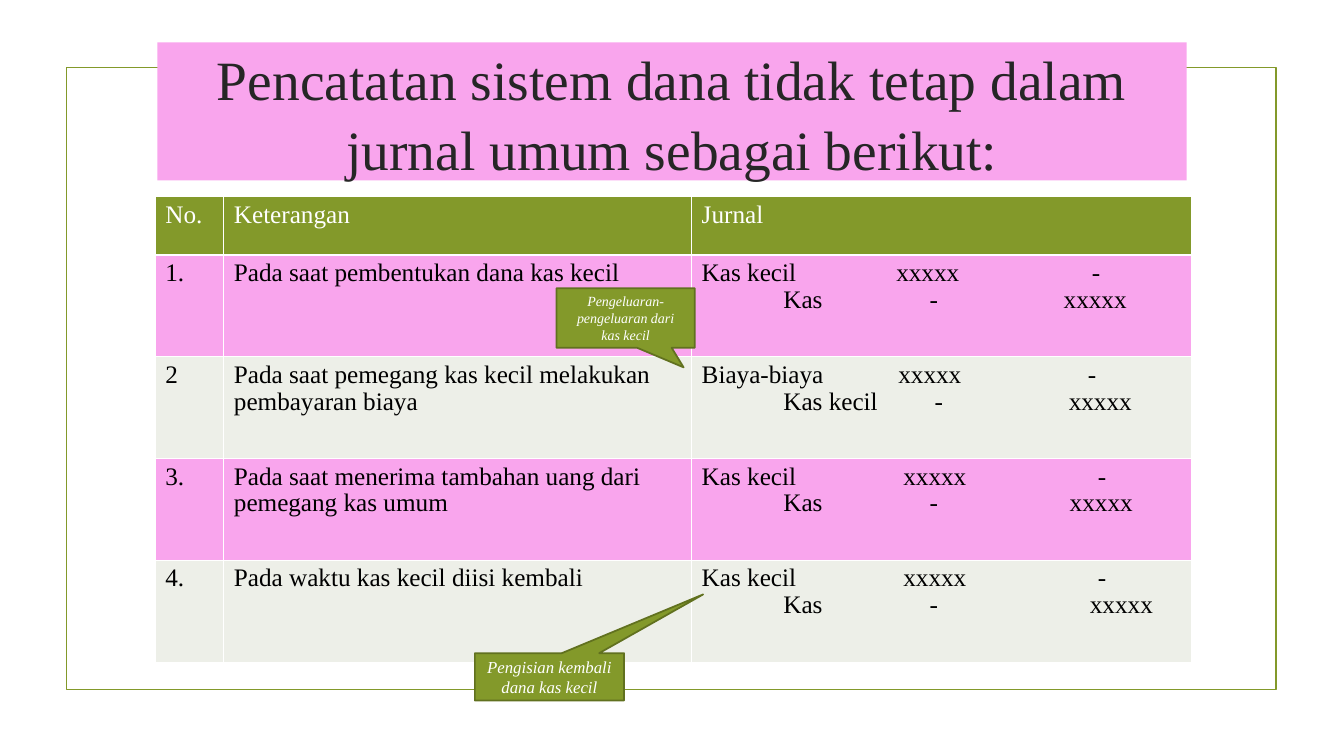
from pptx import Presentation
from pptx import util as u
from pptx.dml import color
from pptx.enum import shapes, text
from pptx.oxml import ns
from lxml import etree

COLORS = {
    "olive": "83992A", "dark_olive": "61711F", "pink": "F9A5ED",
    "pale": "EDEFE8", "white": "FFFFFF", "black": "000000", "title": "262626",
}
FONT = "Times New Roman"
HEADERS = ["No.", "Keterangan", "Jurnal"]

# Each entry: number, description, then debit and credit lines with tab stops
ENTRIES = [
    ("1.", "Pada saat pembentukan dana kas kecil",
     ("Kas kecil\txxxxx\t-", (1.93, 3.87)),
     ("\tKas\t-\txxxxx", (0.81, 2.26, 3.59))),
    ("2", "Pada saat pemegang kas kecil melakukan pembayaran biaya",
     ("Biaya-biaya\txxxxx\t-", (1.95, 3.83)),
     ("\tKas kecil\t-\txxxxx", (0.81, 2.31, 3.64))),
    ("3.", "Pada saat menerima tambahan uang dari pemegang kas umum",
     ("Kas kecil\txxxxx\t-", (2.0, 3.93)),
     ("\tKas\t-\txxxxx", (0.81, 2.26, 3.65))),
    ("4.", "Pada waktu kas kecil diisi kembali",
     ("Kas kecil\txxxxx\t-", (2.0, 3.93)),
     ("\tKas\t-\txxxxx", (0.81, 2.26, 3.85))),
]


def rgb(name):
    return color.RGBColor.from_string(COLORS[name])


class JournalSlide:
    def __init__(self, presentation):
        self.slide = presentation.slides.add_slide(presentation.slide_layouts[5])
        self.shapes = self.slide.shapes

    def paint(self, item, name):
        item.fill.solid()
        item.fill.fore_color.rgb = rgb(name)

    def format_text(self, paragraph, size, name, italic=False):
        for run in paragraph.runs:
            run.font.name = FONT
            run.font.size = u.Pt(size)
            run.font.bold = False
            run.font.italic = italic
            run.font.color.rgb = rgb(name)

    def outlined_shape(self, kind, box, line):
        shape = self.shapes.add_shape(kind, *map(u.Inches, box))
        shape.shadow.inherit = False
        shape.line.color.rgb = rgb(line)
        shape.line.width = u.Pt(1.25)
        return shape

    def frame(self, box):
        shape = self.outlined_shape(shapes.MSO_SHAPE.RECTANGLE, box, "olive")
        shape.fill.background()
        # The frame lies behind the title
        self.shapes.title.element.addprevious(shape.element)

    def title(self, words, box):
        title = self.shapes.title
        title.left, title.top, title.width, title.height = map(u.Inches, box)
        self.paint(title, "pink")
        frame = title.text_frame
        frame.text = words
        frame.word_wrap = True
        frame.auto_size = text.MSO_AUTO_SIZE.NONE
        frame.vertical_anchor = text.MSO_ANCHOR.MIDDLE
        paragraph = frame.paragraphs[0]
        paragraph.alignment = text.PP_ALIGN.CENTER
        paragraph.line_spacing = 1.05
        self.format_text(paragraph, 39.6, "title")

    def tab_stops(self, paragraph, stops):
        properties = paragraph._p.get_or_add_pPr()
        tab_list = etree.SubElement(properties, ns.qn("a:tabLst"))
        for stop in stops:
            etree.SubElement(tab_list, ns.qn("a:tab"), pos=str(u.Inches(stop)), algn="l")

    def borders(self, cell):
        properties = cell._tc.get_or_add_tcPr()
        for position, side in enumerate(("lnL", "lnR", "lnT", "lnB")):
            line = etree.Element(ns.qn(f"a:{side}"), w=str(u.Pt(1)))
            fill = etree.SubElement(line, ns.qn("a:solidFill"))
            etree.SubElement(fill, ns.qn("a:srgbClr"), val=COLORS["white"])
            properties.insert(position, line)

    def cell(self, cell, lines, fill, ink):
        self.paint(cell, fill)
        self.borders(cell)
        cell.text_frame.text = "\n".join(words for words, stops in lines)
        for paragraph, (words, stops) in zip(cell.text_frame.paragraphs, lines):
            if stops:
                self.tab_stops(paragraph, stops)
            paragraph.line_spacing = 0.96
            self.format_text(paragraph, 18, ink)

    def table(self, box, widths, heights):
        table = self.shapes.add_table(
            len(heights), len(widths), *map(u.Inches, box)).table
        table.horz_banding = False
        for column, width in zip(table.columns, widths):
            column.width = u.Inches(width)
        for row, height in zip(table.rows, heights):
            row.height = u.Inches(height)
        for column, header in enumerate(HEADERS):
            self.cell(table.cell(0, column), [(header, ())], "olive", "white")
        for row, (number, description, debit, credit) in enumerate(ENTRIES, 1):
            fill = "pink" if row % 2 else "pale"
            contents = ([(number, ())], [(description, ())], [debit, credit])
            for column, lines in enumerate(contents):
                self.cell(table.cell(row, column), lines, fill, "black")

    def callout(self, words, box, tip, size):
        shape = self.outlined_shape(
            shapes.MSO_SHAPE.RECTANGULAR_CALLOUT, box, "dark_olive")
        shape.adjustments[0], shape.adjustments[1] = tip
        self.paint(shape, "olive")
        frame = shape.text_frame
        frame.text = words
        frame.word_wrap = True
        frame.vertical_anchor = text.MSO_ANCHOR.MIDDLE
        frame.paragraphs[0].alignment = text.PP_ALIGN.CENTER
        self.format_text(frame.paragraphs[0], size, "white", italic=True)


def main():
    presentation = Presentation()
    presentation.slide_width = u.Inches(13.33)
    presentation.slide_height = u.Inches(7.5)
    journal = JournalSlide(presentation)

    # Frame and title
    journal.frame((0.66, 0.67, 12, 6.17))
    journal.title(
        "Pencatatan sistem dana tidak tetap dalam jurnal umum sebagai berikut:",
        (1.56, 0.42, 10.21, 1.37))

    # Journal table
    journal.table((1.54, 1.95, 10.28, 4.61), (0.68, 4.64, 4.96),
                  [0.58] + [1.01] * len(ENTRIES))

    # Callouts
    journal.callout("Pengisian kembali dana kas kecil",
                    (4.71, 6.48, 1.48, 0.47), (1.03, -1.74), 12)
    journal.callout("Pengeluaran-pengeluaran dari kas kecil",
                    (5.52, 2.86, 1.37, 0.59), (0.42, 0.83), 10)

    presentation.save("out.pptx")


if __name__ == "__main__":
    main()
